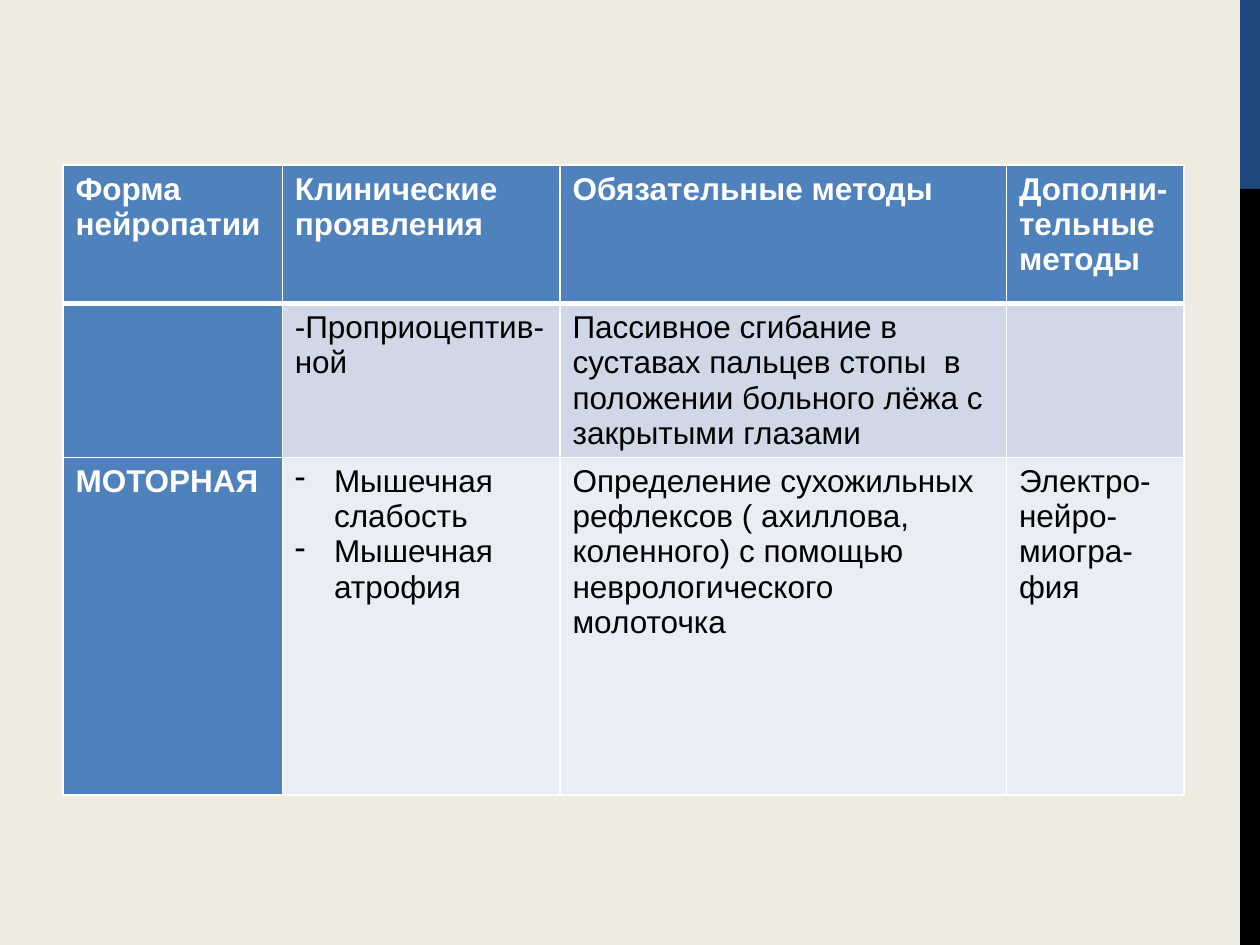
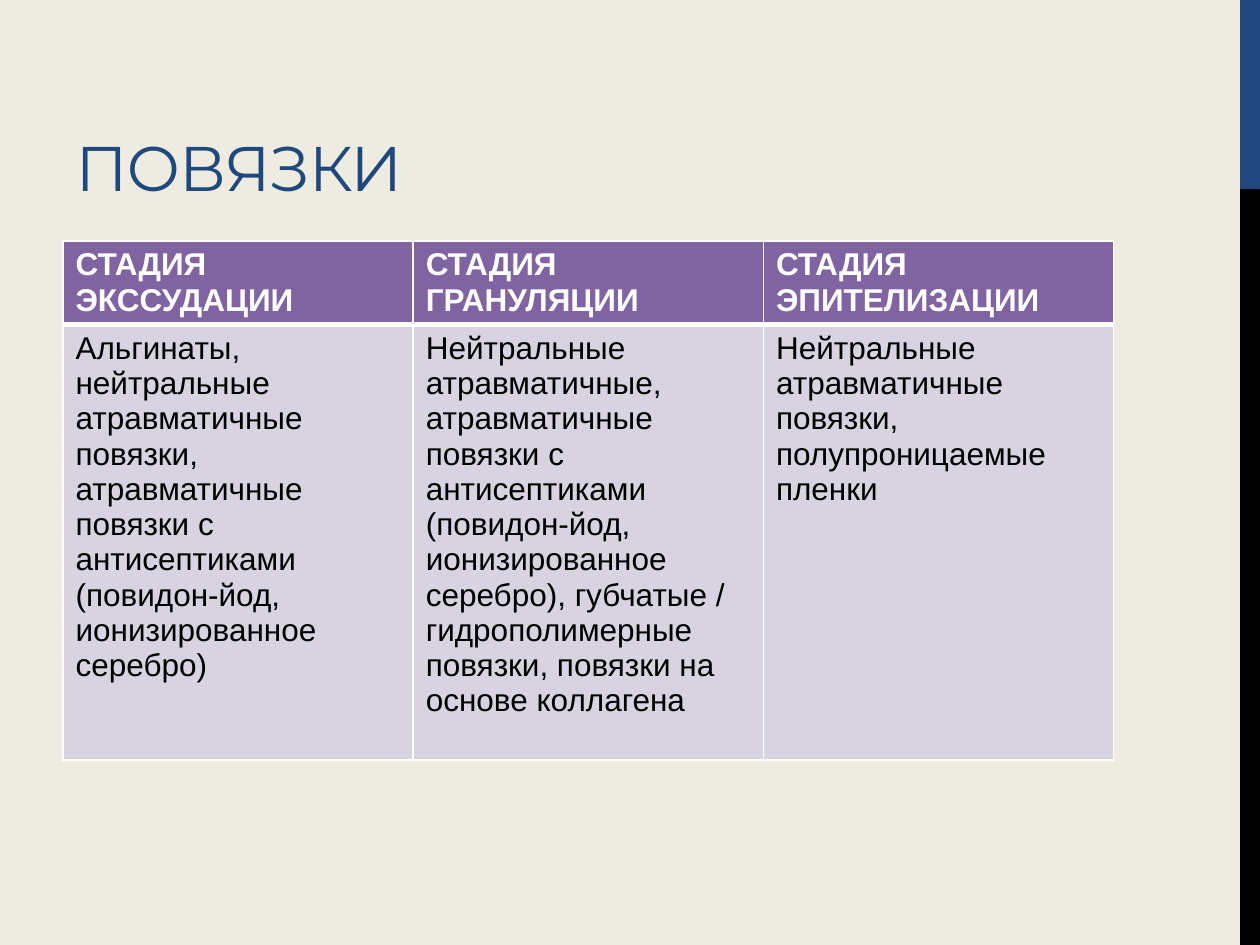
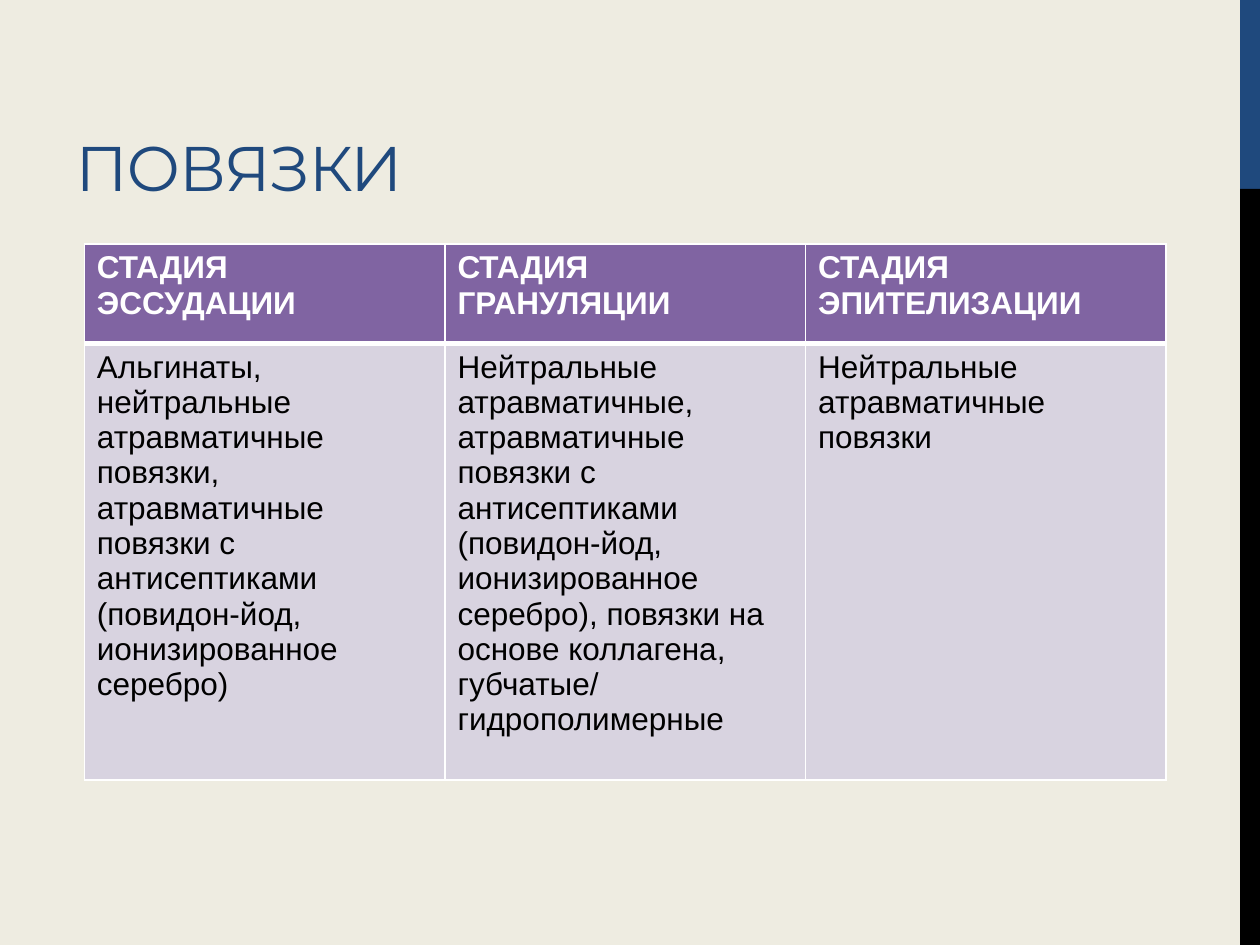
from dataclasses import dataclass
from lxml.etree import SubElement
from pptx import Presentation
from pptx.dml.color import RGBColor
from pptx.enum.shapes import MSO_SHAPE
from pptx.enum.text import MSO_ANCHOR, MSO_AUTO_SIZE, PP_ALIGN
from pptx.oxml.ns import qn
from pptx.util import Cm, Pt

CREAM, NAVY, BLACK, WHITE = "EEECE1", "1F497D", "000000", "FFFFFF"
BLUE, PURPLE = "4F81BD", "8064A2"
DASH = "- "


@dataclass(frozen=True)
class Band:
    """A strip on the right edge of every slide, in centimetres."""
    top: float
    height: float
    color: str


@dataclass(frozen=True)
class Grid:
    """A table with its place in centimetres, its fills and its text."""
    left: float
    top: float
    cols: tuple[float, ...]
    rows: tuple[float, ...]
    head: str
    tints: tuple[str, ...]
    cells: tuple[tuple[str, ...], ...]
    title: str = ""
    side: bool = False


BANDS = (Band(0, 3.81, NAVY), Band(3.81, 15.24, BLACK))

GRIDS = (
    Grid(1.27, 3.33, (4.42, 5.6, 9.0, 3.58), (2.79, 3.1, 6.81),
         BLUE, ("D0D8E8", "E9EDF4"), (
        ("Форма нейропатии", "Клинические проявления",
         "Обязательные методы", "Дополни-тельные методы"),
        ("", "-Проприоцептив-ной",
         "Пассивное сгибание в суставах пальцев стопы  в положении "
         "больного лёжа с закрытыми глазами", ""),
        ("МОТОРНАЯ", "- Мышечная слабость\n- Мышечная атрофия",
         "Определение сухожильных рефлексов ( ахиллова, коленного) "
         "с помощью неврологического молоточка",
         "Электро-\nнейро-\nмиогра-\nфия")), side=True),
    Grid(1.27, 4.86, (7.06,) * 3, (1.68, 8.78), PURPLE, ("D8D3E0",), (
        ("СТАДИЯ ЭКССУДАЦИИ", "СТАДИЯ ГРАНУЛЯЦИИ", "СТАДИЯ ЭПИТЕЛИЗАЦИИ"),
        ("Альгинаты, нейтральные атравматичные повязки, атравматичные "
         "повязки с антисептиками (повидон-йод, ионизированное серебро)",
         "Нейтральные атравматичные, атравматичные повязки с антисептиками "
         "(повидон-йод, ионизированное серебро), губчатые / "
         "гидрополимерные повязки, повязки на основе коллагена",
         "Нейтральные атравматичные повязки, полупроницаемые пленки")),
         title="ПОВЯЗКИ"),
    Grid(1.7, 4.92, (7.27,) * 3, (2.0, 8.8), PURPLE, ("D8D3E0",), (
        ("СТАДИЯ ЭССУДАЦИИ", "СТАДИЯ ГРАНУЛЯЦИИ", "СТАДИЯ ЭПИТЕЛИЗАЦИИ"),
        ("Альгинаты, нейтральные атравматичные повязки, атравматичные "
         "повязки с антисептиками (повидон-йод, ионизированное серебро)",
         "Нейтральные атравматичные, атравматичные повязки с антисептиками "
         "(повидон-йод, ионизированное серебро), повязки на основе "
         "коллагена, губчатые/ гидрополимерные",
         "Нейтральные атравматичные повязки")),
         title="ПОВЯЗКИ"),
)


def paint(fill, color: str) -> None:
    fill.solid()
    fill.fore_color.rgb = RGBColor.from_string(color)


def add_run(para, text: str, font: str, size: float, color: str,
            bold: bool = False):
    run = para.add_run()
    run.text = text
    run.font.name, run.font.size, run.font.bold = font, Pt(size), bold
    run.font.color.rgb = RGBColor.from_string(color)
    return run


def edge(cell, side: str, width: float) -> None:
    props = cell._tc.get_or_add_tcPr()
    line = SubElement(props, qn(f"a:ln{side}"), w=str(Pt(width)))
    fill = SubElement(line, qn("a:solidFill"))
    SubElement(fill, qn("a:srgbClr"), val=WHITE)


def add_dash(para) -> None:
    props = para._p.get_or_add_pPr()
    props.set("marL", str(Cm(0.79)))
    props.set("indent", str(-Cm(0.79)))
    SubElement(props, qn("a:buChar"), char=DASH.strip())


def fill_cell(cell, text: str, color: str, bold: bool) -> None:
    frame = cell.text_frame
    for num, line in enumerate(text.split("\n")):
        para = frame.add_paragraph() if num else frame.paragraphs[0]
        if line.startswith(DASH):
            add_dash(para)
        if line:
            add_run(para, line.removeprefix(DASH), "Arial", 18, color, bold)


def add_grid(slide, grid: Grid) -> None:
    table = slide.shapes.add_table(
        len(grid.rows), len(grid.cols), Cm(grid.left), Cm(grid.top),
        Cm(sum(grid.cols)), Cm(sum(grid.rows))).table
    table.horz_banding = False
    for col, width in zip(table.columns, grid.cols):
        col.width = Cm(width)
    for row, height in zip(table.rows, grid.rows):
        row.height = Cm(height)
    for y, texts in enumerate(grid.cells):
        for x, text in enumerate(texts):
            cell = table.cell(y, x)
            strong = y == 0 or (grid.side and x == 0)
            for side in "LRTB":
                thick = (y, side) in ((0, "B"), (1, "T"))
                edge(cell, side, 3 if thick else 1)
            tint = grid.tints[(y - 1) % len(grid.tints)]
            paint(cell.fill, grid.head if strong else tint)
            fill_cell(cell, text, WHITE if strong else BLACK, strong)


def set_title(slide, text: str) -> None:
    title = slide.shapes.title
    title.left, title.top = Cm(1.27), Cm(0.43)
    title.width, title.height = Cm(16.08), Cm(3.81)
    frame = title.text_frame
    frame.vertical_anchor = MSO_ANCHOR.BOTTOM
    frame.auto_size = MSO_AUTO_SIZE.NONE
    para = frame.paragraphs[0]
    para.alignment = PP_ALIGN.LEFT
    run = add_run(para, text, "Montserrat", 36, NAVY)
    run.font._element.set("spc", "-60")


def add_band(slide, master, band: Band) -> None:
    shape = slide.shapes.add_shape(
        MSO_SHAPE.RECTANGLE, Cm(25), Cm(band.top), Cm(0.4), Cm(band.height))
    shape.shadow.inherit = False
    paint(shape.fill, band.color)
    shape.line.fill.background()
    master.shapes.element.append(shape.element)


def main() -> None:
    """Build the three table slides on one shared master."""
    deck = Presentation()
    deck.slide_width, deck.slide_height = Cm(25.4), Cm(19.05)
    master = deck.slide_master
    paint(master.background.fill, CREAM)
    for grid in GRIDS:
        slide = deck.slides.add_slide(deck.slide_layouts[5 if grid.title else 6])
        if grid.title:
            set_title(slide, grid.title)
        add_grid(slide, grid)
    for band in BANDS:
        add_band(deck.slides[0], master, band)
    deck.save("out.pptx")


if __name__ == "__main__":
    main()
